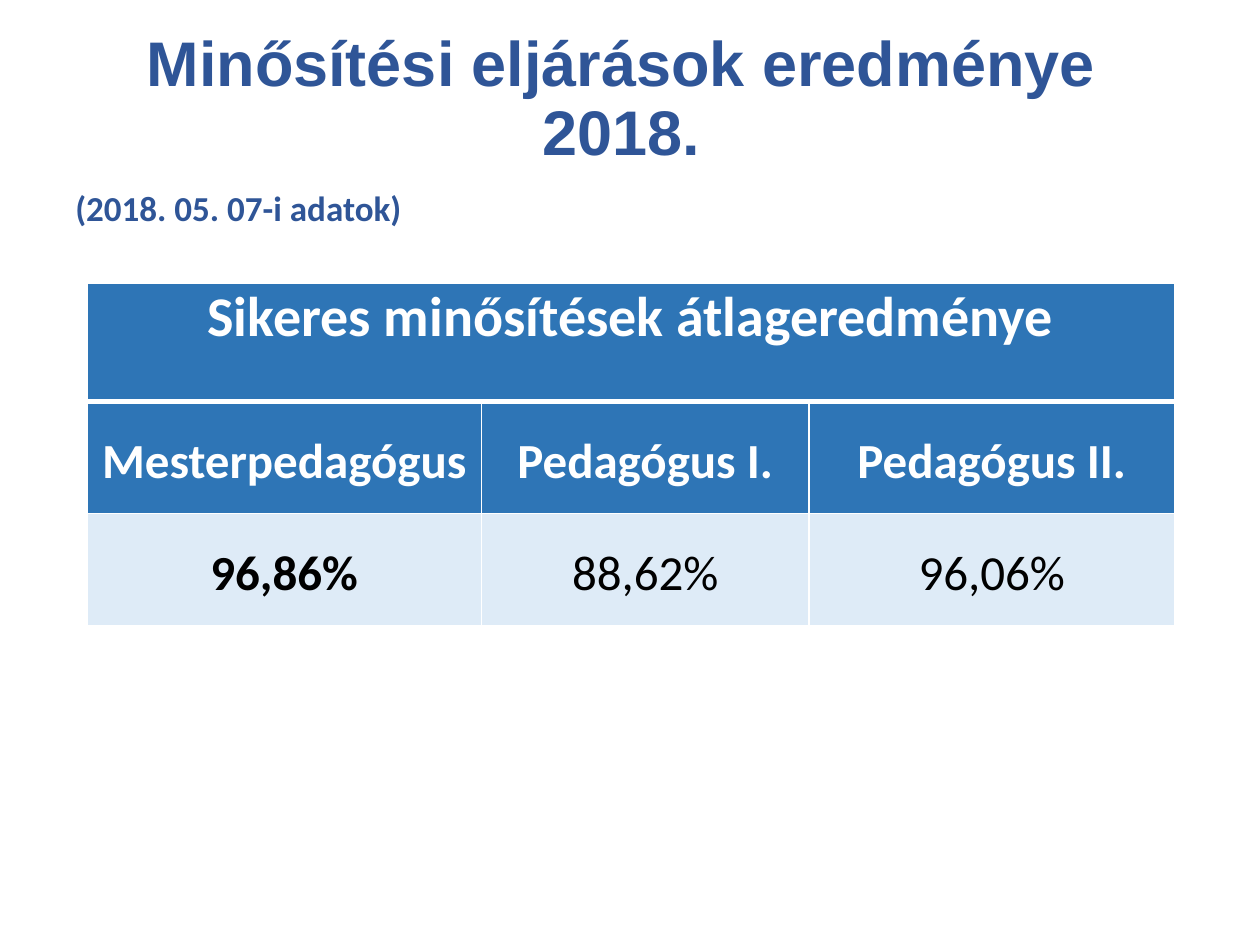
"""Build the slide with the average results of the 2018 qualification procedures."""
from dataclasses import dataclass

from lxml import etree
from pptx import Presentation
from pptx.dml.color import RGBColor
from pptx.enum.text import MSO_ANCHOR, PP_ALIGN
from pptx.oxml.ns import qn
from pptx.util import Pt

CENTER, LEFT = PP_ALIGN.CENTER, PP_ALIGN.LEFT
TOP, MIDDLE = MSO_ANCHOR.TOP, MSO_ANCHOR.MIDDLE
NAVY = RGBColor(0x2F, 0x55, 0x97)
BLUE = RGBColor(0x2E, 0x75, 0xB6)
PALE = RGBColor(0xDE, 0xEB, 0xF7)
WHITE = RGBColor(0xFF, 0xFF, 0xFF)
BLACK = RGBColor(0x00, 0x00, 0x00)
COL_WIDTHS = (225.4, 187.2, 208.8)
ROW_HEIGHTS = (67.6, 64, 64)


@dataclass
class Level:
    name: str
    result: str
    bold: bool = False


LEVELS = (
    Level("Mesterpedagógus", "96,86%", True),
    Level("Pedagógus I.", "88,62%"),
    Level("Pedagógus II.", "96,06%"),
)


def write(tf, text: str, *, size: float, color: RGBColor, font: str = "Calibri",
          bold: bool = True, align=CENTER, spacing: float = 1.0, anchor=None) -> None:
    """Put one formatted paragraph into a text frame."""
    tf.word_wrap = True
    if anchor is not None:
        tf.vertical_anchor = anchor
    p = tf.paragraphs[0]
    p.alignment, p.line_spacing, p.space_before = align, spacing, Pt(0)
    r = p.add_run()
    r.text = text
    r.font.name, r.font.size, r.font.bold = font, Pt(size), bold
    r.font.color.rgb = color


def style_cell(cell, fill: RGBColor, top: float = 1, bottom: float = 1) -> None:
    """Set the margins, white borders and fill of a cell."""
    cell.margin_left = cell.margin_right = Pt(4.3)
    cell.margin_top = cell.margin_bottom = Pt(0)
    tc_pr = cell._tc.get_or_add_tcPr()
    for side, width in (("L", 1), ("R", 1), ("T", top), ("B", bottom)):
        ln = etree.SubElement(tc_pr, qn(f"a:ln{side}"), w=str(Pt(width)))
        solid = etree.SubElement(ln, qn("a:solidFill"))
        etree.SubElement(solid, qn("a:srgbClr"), val=str(WHITE))
    cell.fill.solid()
    cell.fill.fore_color.rgb = fill


def add_results(s, left: float, top: float) -> None:
    """Add the table of average results by level."""
    frame = s.shapes.add_table(len(ROW_HEIGHTS), len(COL_WIDTHS), Pt(left), Pt(top),
                               Pt(sum(COL_WIDTHS)), Pt(sum(ROW_HEIGHTS)))
    table = frame.table
    for col, width in zip(table.columns, COL_WIDTHS):
        col.width = Pt(width)
    for row, height in zip(table.rows, ROW_HEIGHTS):
        row.height = Pt(height)
    table.cell(0, 0).merge(table.cell(0, len(LEVELS) - 1))
    write(table.cell(0, 0).text_frame, "Sikeres minősítések átlageredménye",
          size=32, color=WHITE)
    for i, level in enumerate(LEVELS):
        heading, name, result = (table.cell(row, i) for row in range(3))
        style_cell(heading, BLUE, bottom=3)
        style_cell(name, BLUE, top=3)
        style_cell(result, PALE)
        write(name.text_frame, level.name, size=28, color=WHITE, spacing=1.5)
        write(result.text_frame, level.result, size=28, color=BLACK,
              bold=level.bold, spacing=1.5)


def main() -> None:
    """Build and save the presentation."""
    prs = Presentation()
    prs.slide_width, prs.slide_height = Pt(720), Pt(540)
    s = prs.slides.add_slide(prs.slide_layouts[5])
    title = s.shapes.title
    title.left, title.top, title.width, title.height = Pt(31), Pt(15), Pt(648), Pt(85)
    write(title.text_frame, "Minősítési eljárások eredménye 2018.", size=36,
          color=NAVY, font="Arial", spacing=0.9, anchor=MIDDLE)
    sp = s.shapes.add_textbox(Pt(36), Pt(105.8), Pt(648), Pt(376.6))
    write(sp.text_frame, "(2018. 05. 07-i adatok)", size=20, color=NAVY,
          align=LEFT, spacing=0.9, anchor=TOP)
    add_results(s, 49.7, 162)
    prs.save("out.pptx")


if __name__ == "__main__":
    main()
